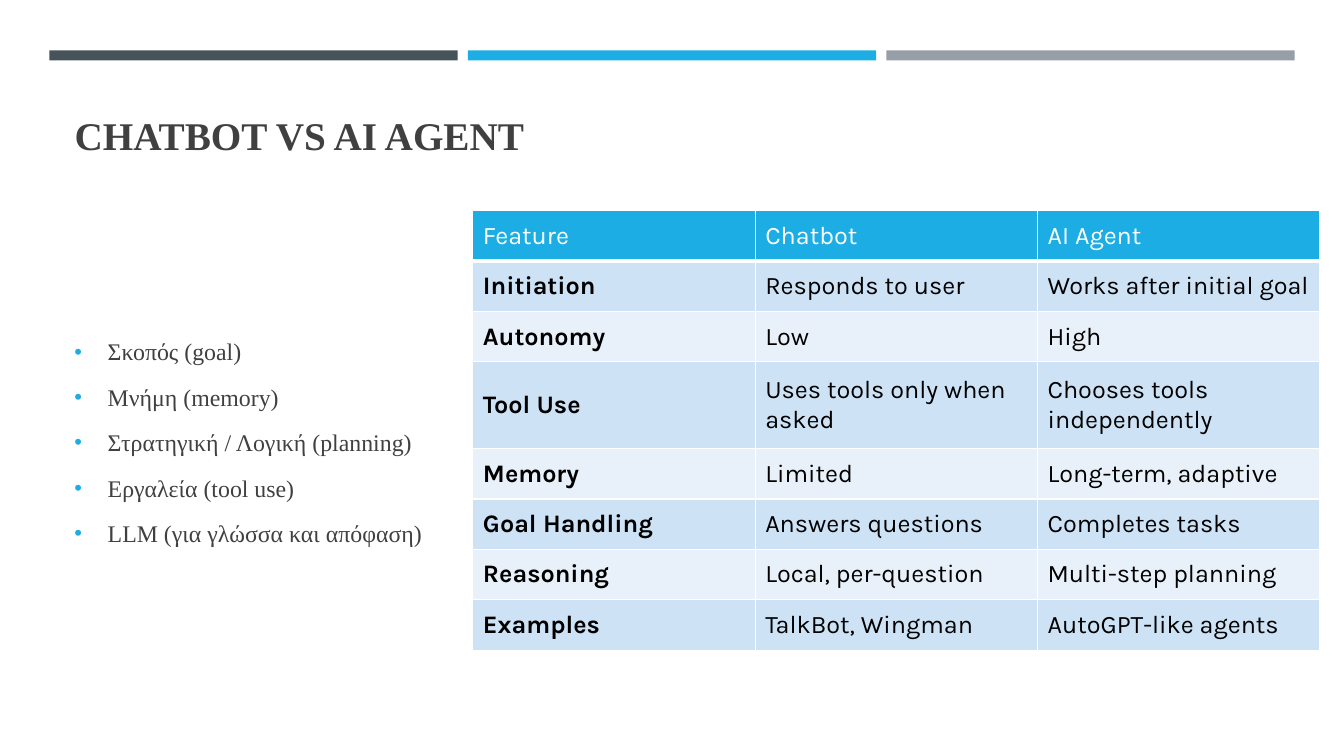
from lxml.etree import SubElement
from pptx import Presentation
from pptx.dml.color import RGBColor
from pptx.enum.shapes import MSO_SHAPE
from pptx.enum.text import MSO_ANCHOR, PP_ALIGN
from pptx.oxml.ns import qn
from pptx.util import Pt

INK = {
    "slate": "465359", "blue": "1CADE4", "gray": "969FA7", "text": "404040",
    "white": "FFFFFF", "black": "000000", "band": "CDE3F5", "pale": "E8F1FA",
}
GOALS = [
    "Σκοπός (goal)",
    "Μνήμη (memory)",
    "Στρατηγική / Λογική (planning)",
    "Εργαλεία (tool use)",
    "LLM (για γλώσσα και απόφαση)",
]
ROWS = [
    ("Feature", "Chatbot", "AI Agent"),
    ("Initiation", "Responds to user", "Works after initial goal"),
    ("Autonomy", "Low", "High"),
    ("Tool Use", "Uses tools only when asked", "Chooses tools independently"),
    ("Memory", "Limited", "Long-term, adaptive"),
    ("Goal Handling", "Answers questions", "Completes tasks"),
    ("Reasoning", "Local, per-question", "Multi-step planning"),
    ("Examples", "TalkBot, Wingman", "AutoGPT-like agents"),
]


def px(n):
    return n * 9144


def tint(name):
    return RGBColor.from_string(INK[name])


class Deck:
    """Holds the style and the current slide, and draws each kind of element."""

    serif, sans = "Times New Roman", "Karla"

    def __init__(self):
        self.prs = Presentation()
        self.prs.slide_width, self.prs.slide_height = px(1333), px(750)
        self.slide = self.prs.slides.add_slide(self.prs.slide_layouts[5])

    def style(self, para, font, size, ink, bold=False):
        for run in para.runs:
            run.font.name, run.font.size, run.font.bold = font, Pt(size), bold
            run.font.color.rgb = tint(ink)

    def frame(self, shape, foot):
        frame = shape.text_frame
        frame.word_wrap = True
        frame.vertical_anchor = MSO_ANCHOR.MIDDLE
        frame.margin_left = frame.margin_right = px(10)
        frame.margin_top, frame.margin_bottom = px(5), px(foot)
        return frame

    def bar(self, x, y, w, h, ink):
        bar = self.slide.shapes.add_shape(MSO_SHAPE.RECTANGLE, px(x), px(y), px(w), px(h))
        bar.shadow.inherit = False
        bar.fill.solid()
        bar.fill.fore_color.rgb = tint(ink)
        bar.line.fill.background()

    def title(self, x, y, w, h, text):
        title = self.slide.shapes.title
        title.left, title.top, title.width, title.height = px(x), px(y), px(w), px(h)
        frame = self.frame(title, 21)
        frame.text = text
        para = frame.paragraphs[0]
        para.alignment = PP_ALIGN.LEFT
        self.style(para, self.serif, 28, "text", True)

    def bullets(self, x, y, w, h, items):
        box = self.slide.shapes.add_textbox(px(x), px(y), px(w), px(h))
        frame = self.frame(box, 39)
        for i, item in enumerate(items):
            para = frame.add_paragraph() if i else frame.paragraphs[0]
            para.text = item
            para.line_spacing = 1.1
            para.space_before, para.space_after = Pt(4 if i else 0), Pt(6)
            props = para._p.get_or_add_pPr()
            props.set("marL", str(px(33)))
            props.set("indent", str(px(-33)))
            color = SubElement(props, qn("a:buClr"))
            SubElement(color, qn("a:srgbClr"), val=INK["blue"])
            SubElement(props, qn("a:buSzPct"), val="92000")
            SubElement(props, qn("a:buFont"), typeface="Arial")
            SubElement(props, qn("a:buChar"), char="•")
            self.style(para, self.serif, 17, "text")

    def edges(self, cell, foot):
        props = cell._tc.get_or_add_tcPr()
        for i, (side, size) in enumerate(zip("LRTB", (1, 1, 1, foot))):
            line = props.makeelement(qn(f"a:ln{side}"), {"w": str(Pt(size))})
            fill = SubElement(line, qn("a:solidFill"))
            SubElement(fill, qn("a:srgbClr"), val=INK["white"])
            props.insert(i, line)

    def table(self, x, y, wide, high, rows):
        count = len(rows[0])
        table = self.slide.shapes.add_table(
            len(rows), count, px(x), px(y), px(wide * count), px(sum(high))
        ).table
        for col in table.columns:
            col.width = px(wide)
        for r, row in enumerate(rows):
            table.rows[r].height = px(high[r])
            fill = ("band" if r % 2 else "pale") if r else "blue"
            for c, text in enumerate(row):
                cell = table.cell(r, c)
                cell.text_frame.text = text
                cell.vertical_anchor = MSO_ANCHOR.MIDDLE
                cell.fill.solid()
                cell.fill.fore_color.rgb = tint(fill)
                ink = "black" if r else "white"
                bold = r > 0 and c == 0
                self.style(cell.text_frame.paragraphs[0], self.sans, 18, ink, bold)
                self.edges(cell, 1 if r else 3)


def main():
    deck = Deck()
    for i, ink in enumerate(("slate", "blue", "gray")):
        deck.bar(49 + i * 415, 50, 405, 10, ink)
    deck.title(64, 77, 1206, 130, "CHATBOT VS AI AGENT")
    deck.bullets(64, 256, 455, 397, GOALS)
    high = [86 if row[0] == "Tool Use" else 50 for row in ROWS]
    deck.table(469, 209, 280, high, ROWS)
    deck.prs.save("out.pptx")


if __name__ == "__main__":
    main()
